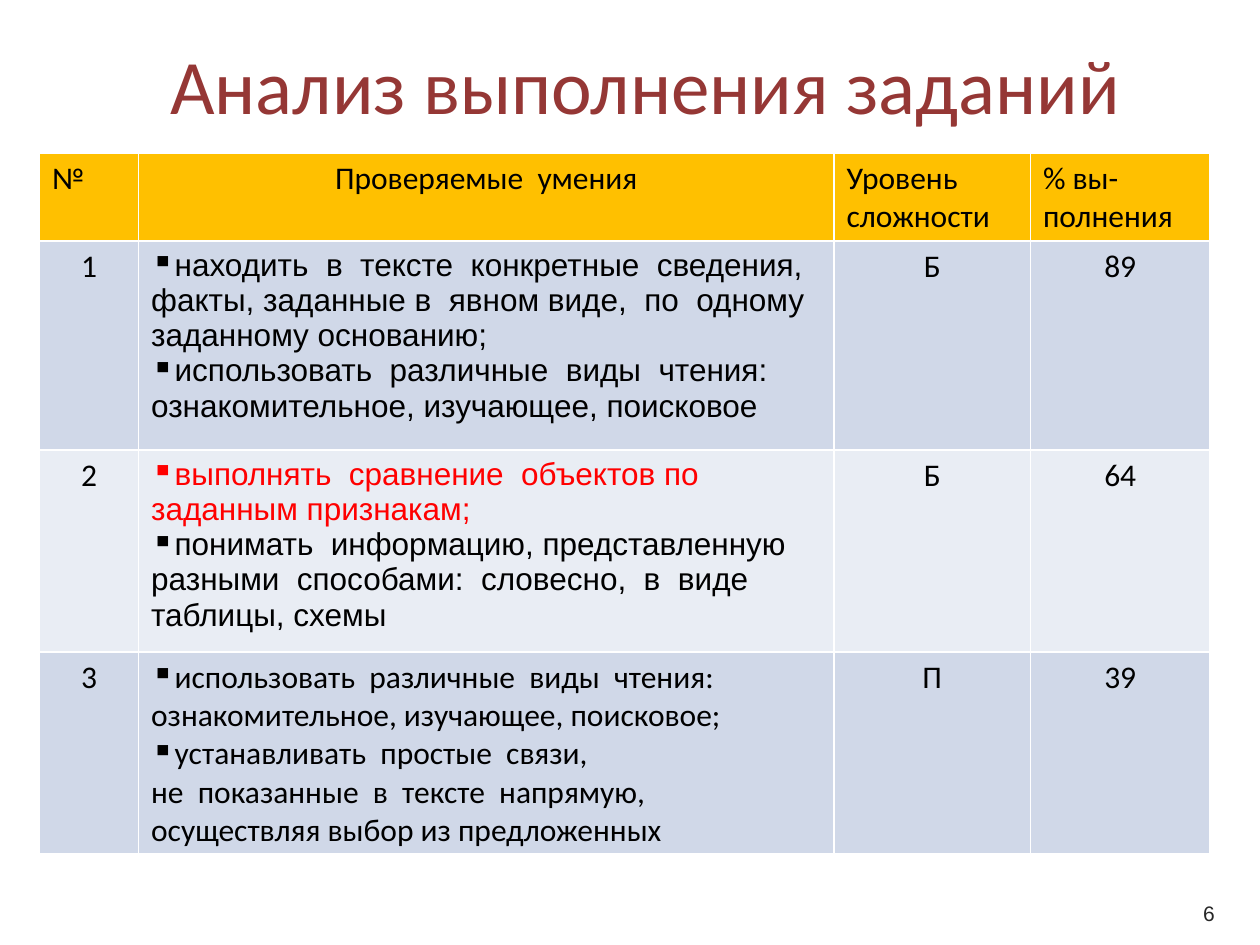
from lxml import etree
from pptx import Presentation
from pptx.dml.color import RGBColor
from pptx.enum.text import MSO_ANCHOR, PP_ALIGN
from pptx.oxml.ns import qn
from pptx.util import Pt

LEFT, MID = PP_ALIGN.LEFT, PP_ALIGN.CENTER
CENTER = MSO_ANCHOR.MIDDLE
BLACK, RED = "000000", "FF0000"
MARK = "▪"


def color(code):
    return RGBColor.from_string(code)


def write(frame, lines, align, size, face, tint=BLACK):
    for i, line in enumerate(lines):
        para = frame.paragraphs[0] if i == 0 else frame.add_paragraph()
        para.alignment = align
        run = para.add_run()
        run.text = line.removeprefix(MARK)
        look = {"size": Pt(size), "name": face, "bold": False}
        for key, value in look.items():
            setattr(run.font, key, value)
        run.font.color.rgb = color(tint)
        if line.startswith(MARK):
            props = para._p.get_or_add_pPr()
            props.set("marL", "0")
            props.set("indent", "0")
            etree.SubElement(props, qn("a:buChar")).set("char", MARK)


deck = Presentation()
deck.slide_width, deck.slide_height = Pt(720), Pt(540)
slide = deck.slides.add_slide(deck.slide_layouts[6])

labels = [
    ((36, 13, 666, 70), "Анализ выполнения заданий", MID, 44, "Calibri", "953735"),
    ((680.4, 507.6, 36.7, 28.8), "6", LEFT, 12, "Arial", "262626"),
]
for place, text, align, size, face, tint in labels:
    frame = slide.shapes.add_textbox(*map(Pt, place)).text_frame
    for key, value in {"word_wrap": True, "vertical_anchor": CENTER}.items():
        setattr(frame, key, value)
    write(frame, [text], align, size, face, tint)

heads = ["№", "Проверяемые  умения", "Уровень сложности", "% вы-полнения"]
tasks = [
    ("1", [
        "▪находить  в  тексте  конкретные  сведения, факты, заданные в  явном виде,  по  одному заданному основанию;",
        "▪использовать  различные  виды  чтения: ознакомительное, изучающее, поисковое",
    ], "Б", "89"),
    ("2", [
        "▪выполнять  сравнение  объектов по заданным признакам;",
        "▪понимать  информацию, представленную  разными  способами:  словесно,  в  виде  таблицы, схемы",
    ], "Б", "64"),
    ("3", [
        "▪использовать  различные  виды  чтения:",
        "ознакомительное, изучающее, поисковое;",
        "▪устанавливать  простые  связи,",
        "не  показанные  в  тексте  напрямую,",
        "осуществляя выбор из предложенных",
    ], "П", "39"),
]
fills = ["FFC000", "D0D8E8", "E9EDF4", "D0D8E8"]
widths = [56.6, 397.4, 112.3, 102.6]
heights = [50.4, 119.4, 115.2, 115.2]

table = slide.shapes.add_table(
    4, 4, Pt(22.6), Pt(87.4), Pt(sum(widths)), Pt(sum(heights))
).table
for column, width in zip(table.columns, widths):
    column.width = Pt(width)
for row, height in zip(table.rows, heights):
    row.height = Pt(height)

for r, (row, fill) in enumerate(zip([heads, *tasks], fills)):
    for c, text in enumerate(row):
        cell = table.cell(r, c)
        cell.fill.solid()
        cell.fill.fore_color.rgb = color(fill)
        lines = text if isinstance(text, list) else [text]
        align = MID if (r == 0) == (c == 1) else LEFT
        face = "Arial" if c == 1 and r in (1, 2) else "Calibri"
        write(cell.text_frame, lines, align, 18, face)

alert = table.cell(2, 1).text_frame.paragraphs[0].runs[0]
alert.font.color.rgb = color(RED)

deck.save("out.pptx")
